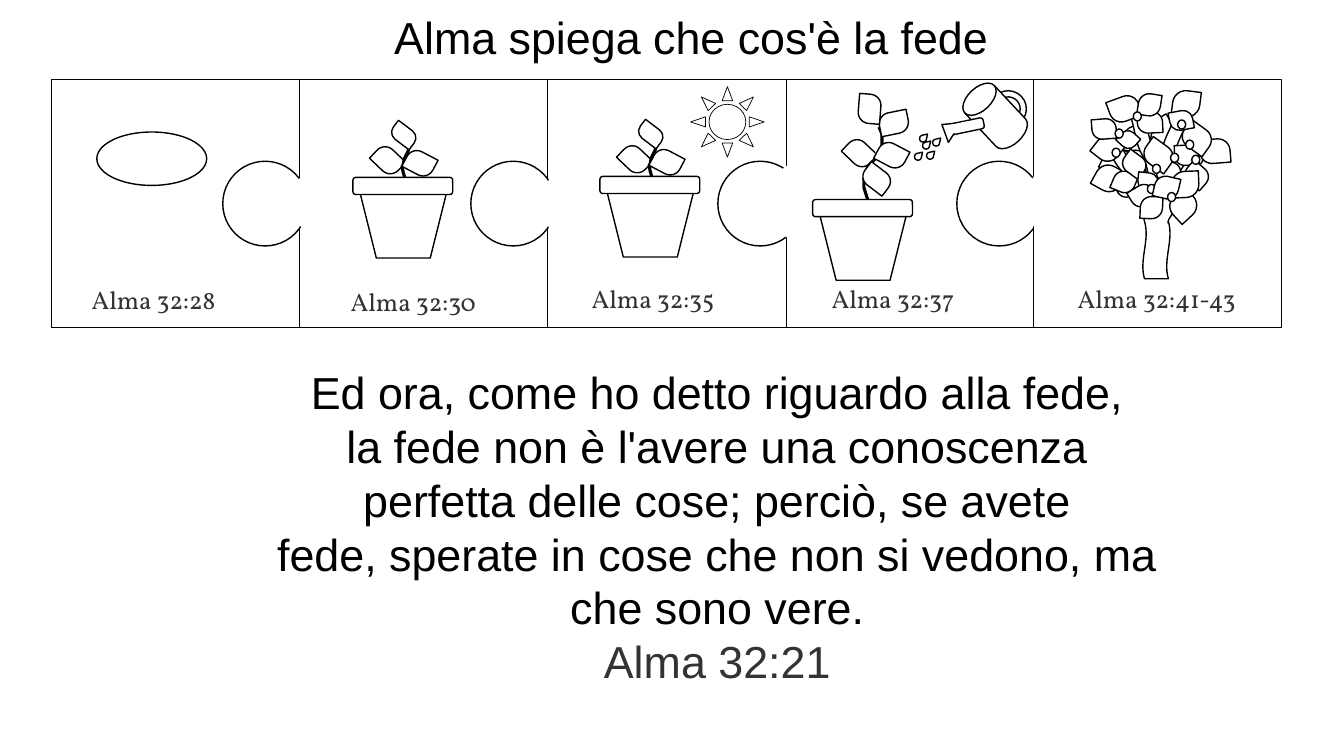
from dataclasses import dataclass
from math import cos, radians, sin

from lxml.etree import SubElement
from pptx import Presentation
from pptx.dml.color import RGBColor
from pptx.enum.shapes import MSO_SHAPE as Kind
from pptx.enum.text import MSO_ANCHOR as Anchor, MSO_AUTO_SIZE as AutoSize, PP_ALIGN as Align
from pptx.oxml.ns import qn
from pptx.util import Inches, Pt

BLACK = RGBColor(0x00, 0x00, 0x00)
WHITE = RGBColor(0xFF, 0xFF, 0xFF)
GREY = RGBColor(0x33, 0x33, 0x33)
STEM_TILT = 20.5


@dataclass(frozen=True)
class Part:
    kind: Kind
    left: float
    top: float
    width: float
    height: float
    rotation: float = 0
    adjust: tuple[float, ...] = ()
    line: RGBColor | None = BLACK
    weight: float = 1


@dataclass(frozen=True)
class Stem:
    center: tuple[float, float]
    points: list[tuple[float, float]]


def leaf(left: float, top: float, width: float, height: float, rotation: float) -> Part:
    return Part(Kind.ROUND_2_DIAG_RECTANGLE, left, top, width, height, rotation, (0.5, 0))


def berry(left: float, top: float) -> Part:
    return Part(Kind.OVAL, left, top, 0.08, 0.09)


def branch(left: float, top: float, rotation: float) -> Part:
    return Part(Kind.DOUBLE_WAVE, left, top, 0.95, 0.15, rotation)


def drop(left: float, top: float) -> Part:
    return Part(Kind.TEAR, left, top, 0.07, 0.07, adjust=(1.286,))


def panel(left: float) -> Part:
    return Part(Kind.RECTANGLE, left, 0.79, 2.46, 2.46)


def knob(left: float, top: float = 1.6, line: RGBColor = BLACK) -> Part:
    return Part(Kind.OVAL, left, top, 0.84, 0.84, line=line)


# Puzzle strip: panels, outlined knobs and white circles that open the sockets
PUZZLE = [
    *map(panel, (0.51, 2.97, 5.43)), *map(knob, (2.21, 4.67, 7.12)),
    panel(7.8), knob(9.49), knob(5.38, line=WHITE),
    knob(2.91, 1.58, WHITE), knob(7.62, 1.58, WHITE),
    panel(10.25), knob(10.18, 1.58, WHITE),
]
SEED = Part(Kind.OVAL, 0.96, 1.31, 1.09, 0.53)
SUN = Part(Kind.SUN, 6.85, 0.86, 0.73, 0.7, weight=0.5)

# Plants, measured from the top left of the pot's rim
POT = [Part(Kind.TRAPEZOID, 0.04, 0.03, 0.92, 0.77, 180),
       Part(Kind.ROUNDED_RECTANGLE, 0, 0, 0.99, 0.17)]
SPROUT_STEM = Stem((0.54, -0.15), [
    (0.53, 0.13), (0.54, 0.1), (0.53, 0.05), (0.5, -0.05), (0.49, -0.11),
    (0.5, -0.12), (0.51, -0.18), (0.53, -0.22), (0.55, -0.26),
    (0.56, -0.3), (0.56, -0.34), (0.56, -0.37), (0.54, -0.42)])
SPROUT_LEAVES = [leaf(0.2, -0.28, 0.29, 0.22, 43.7), leaf(0.52, -0.25, 0.29, 0.22, 27.8),
                 leaf(0.42, -0.55, 0.17, 0.26, 307.3)]
TALL_STEM = Stem((0.6, -0.28), [
    (0.54, 0.17), (0.56, 0.11), (0.56, 0.04), (0.51, -0.12), (0.51, -0.21),
    (0.52, -0.23), (0.55, -0.33), (0.61, -0.39), (0.65, -0.46),
    (0.69, -0.53), (0.69, -0.59), (0.69, -0.65), (0.66, -0.72)])
TALL_LEAVES = [leaf(0.32, -0.57, 0.29, 0.22, 43.7), leaf(0.64, -0.55, 0.29, 0.22, 27.8),
               leaf(0.53, -0.35, 0.21, 0.29, 307.3), leaf(0.66, -0.87, 0.29, 0.22, 348.6),
               leaf(0.42, -1.01, 0.29, 0.22, 274.6)]

WATERING_CAN = [
    Part(Kind.DONUT, 9.82, 0.9, 0.36, 0.36, 316.9, (0.169,)),
    Part(Kind.FLOWCHART_MAGNETIC_DISK, 9.67, 0.81, 0.4, 0.68, 316.9),
    Part(Kind.ROUNDED_RECTANGLE, 9.52, 1.07, 0.11, 0.37, 258.2, (0.258,)),
    Part(Kind.ISOSCELES_TRIANGLE, 9.29, 1.2, 0.23, 0.15, 302.6),
    Part(Kind.ROUNDED_RECTANGLE, 9.47, 1.17, 0.09, 0.19, 258.2, (0.258,), None),
    drop(9.15, 1.41), drop(9.25, 1.38), drop(9.12, 1.34), drop(9.07, 1.52), drop(9.19, 1.51),
]

TREE = [
    # Leaves behind the branches
    leaf(11.58, 1.31, 0.24, 0.3, 85.5), leaf(11.38, 1.18, 0.27, 0.26, 329.9),
    leaf(11.14, 1.25, 0.27, 0.26, 10.4), leaf(11.15, 1.49, 0.22, 0.22, 15.3),
    leaf(10.94, 1.47, 0.27, 0.26, 26.4), leaf(10.86, 1.64, 0.27, 0.26, 28.9),
    leaf(11.09, 1.73, 0.2, 0.24, 71.7),
    # Trunk and branches
    Part(Kind.DOUBLE_WAVE, 10.9, 2.06, 1.14, 0.27, 270),
    branch(10.72, 1.6, 235.5), branch(11.24, 1.76, 298.7),
    branch(11.11, 1.45, 289.4), branch(10.91, 1.43, 252.4),
    Part(Kind.OVAL, 11.39, 1.81, 0.19, 0.67, line=None),
    # Crown
    leaf(10.86, 1.35, 0.25, 0.25, 38.2), leaf(11.63, 0.9, 0.27, 0.26, 187.3),
    leaf(11.03, 0.93, 0.24, 0.3, 69.8), leaf(11.1, 1.3, 0.18, 0.17, 42.2),
    leaf(10.85, 1.16, 0.2, 0.24, 85.5), leaf(11.3, 1.09, 0.21, 0.25, 87.1),
    leaf(11.04, 1.7, 0.22, 0.21, 22.8), leaf(11.15, 1.51, 0.2, 0.24, 126.4),
    leaf(11.49, 1.59, 0.2, 0.24, 87.1), leaf(11.37, 1.39, 0.24, 0.3, 126),
    leaf(11.29, 0.93, 0.22, 0.22, 8.9), leaf(11.67, 1.42, 0.2, 0.24, 87.1),
    leaf(11.93, 1.35, 0.24, 0.3, 85.5), leaf(11.75, 1.22, 0.24, 0.3, 126),
    leaf(11.62, 1.08, 0.19, 0.23, 79.4), leaf(11.77, 1.62, 0.2, 0.24, 130.9),
    berry(11.03, 1.47), berry(11.82, 1.54), berry(11.76, 1.39), berry(11.06, 1.28),
    berry(11.24, 1.11), berry(11.68, 1.19), berry(11.43, 1.63), berry(11.61, 1.52),
    # Lower leaves
    leaf(11.3, 1.7, 0.17, 0.2, 276.1), leaf(11.23, 1.82, 0.2, 0.24, 238.6),
    berry(11.38, 1.83),
    leaf(11.6, 1.91, 0.27, 0.26, 137.2), leaf(11.62, 1.7, 0.27, 0.26, 177.7),
    leaf(11.31, 1.95, 0.22, 0.22, 182.6), leaf(11.45, 1.75, 0.24, 0.22, 193.2),
    berry(11.58, 1.91),
]

LABELS = [("Alma 32:28", 0.81, 2.77, 1.48), ("Alma 32:30", 3.38, 2.79, 1.48),
          ("Alma 32:35", 5.77, 2.76, 1.48), ("Alma 32:37", 8.15, 2.76, 1.48),
          ("Alma 32:41-43", 10.59, 2.76, 1.84)]
# "~" marks a space where the line must not break
VERSE = ("Ed ora, come ho detto riguardo alla fede, la~fede~non è l'avere una conoscenza "
         "perfetta delle cose; perciò, se avete fede,~sperate~in cose che~non~si vedono, "
         "ma che sono vere.").replace("~", chr(160))


def paint(shape, line: RGBColor | None, weight: float) -> None:
    shape.shadow.inherit = False
    shape.fill.solid()
    shape.fill.fore_color.rgb = WHITE
    if line is None:
        shape.line.fill.background()
    else:
        shape.line.color.rgb = line
        shape.line.width = Pt(weight)


def draw(shapes, parts: list[Part], left: float = 0, top: float = 0) -> None:
    for part in parts:
        shape = shapes.add_shape(part.kind, Inches(left + part.left), Inches(top + part.top),
                                 Inches(part.width), Inches(part.height))
        shape.rotation = part.rotation
        for index, value in enumerate(part.adjust):
            shape.adjustments[index] = value
        paint(shape, part.line, part.weight)


def draw_stem(shapes, left: float, top: float, stem: Stem) -> None:
    across, down = cos(radians(STEM_TILT)), sin(radians(STEM_TILT))
    middle_x, middle_y = stem.center
    offsets = [(x - middle_x, y - middle_y) for x, y in stem.points]
    points = [(Inches(left + middle_x + x * across - y * down),
               Inches(top + middle_y + x * down + y * across)) for x, y in offsets]
    builder = shapes.build_freeform(*points[0])
    builder.add_line_segments(points[1:], close=False)
    shape = builder.convert_to_shape()
    shape.rotation = -STEM_TILT
    paint(shape, BLACK, 2.25)


def draw_plant(page, left: float, top: float, stem: Stem, leaves: list[Part]) -> None:
    shapes = page.shapes.add_group_shape().shapes
    draw(shapes, leaves[:1], left, top)
    draw_stem(shapes, left, top, stem)
    draw(shapes, [leaves[1], *POT, *leaves[2:]], left, top)


def write(box, place: tuple, *lines: tuple[str, RGBColor], font: str = "Arial",
          size: float = 32, align: Align = Align.LEFT, wrap: bool = False) -> None:
    box.left, box.top, box.width, box.height = map(Inches, place)
    frame = box.text_frame
    frame.word_wrap = wrap
    frame.auto_size = AutoSize.SHAPE_TO_FIT_TEXT
    frame.vertical_anchor = Anchor.TOP
    for index, (text, color) in enumerate(lines):
        para = frame.add_paragraph() if index else frame.paragraphs[0]
        para.alignment = align
        para.space_before = Pt(0)
        properties = para._p.get_or_add_pPr()
        properties.set("marL", "0")
        properties.set("indent", "0")
        SubElement(properties, qn("a:buNone"))
        span = para.add_run()
        span.text = text
        span.font.name, span.font.size, span.font.color.rgb = font, Pt(size), color


def main() -> None:
    deck = Presentation()
    deck.slide_width, deck.slide_height = Inches(13.33), Inches(7.5)
    page = deck.slides.add_slide(deck.slide_layouts[1])
    # Title and verse
    write(page.shapes.title, (3.81, 0.05, 6.68, 0.64), ("Alma spiega che cos'è la fede", BLACK))
    write(page.placeholders[1], (2.64, 3.57, 8.95, 3.33), (VERSE, BLACK), ("Alma 32:21", GREY),
          align=Align.CENTER, wrap=True)
    # Puzzle and drawings
    for parts in (PUZZLE, WATERING_CAN, TREE):
        draw(page.shapes.add_group_shape().shapes, parts)
    draw(page.shapes, [SEED, SUN])
    draw_plant(page, 3.5, 1.76, SPROUT_STEM, SPROUT_LEAVES)
    draw_plant(page, 5.95, 1.75, SPROUT_STEM, SPROUT_LEAVES)
    draw_plant(page, 8.06, 1.98, TALL_STEM, TALL_LEAVES)
    # Verse references
    for text, left, top, width in LABELS:
        place = (left, top, width, 0.4)
        write(page.shapes.add_textbox(*map(Inches, place)), place, (text, GREY),
              font="Vollkorn", size=18)
    deck.save("out.pptx")


if __name__ == "__main__":
    main()
